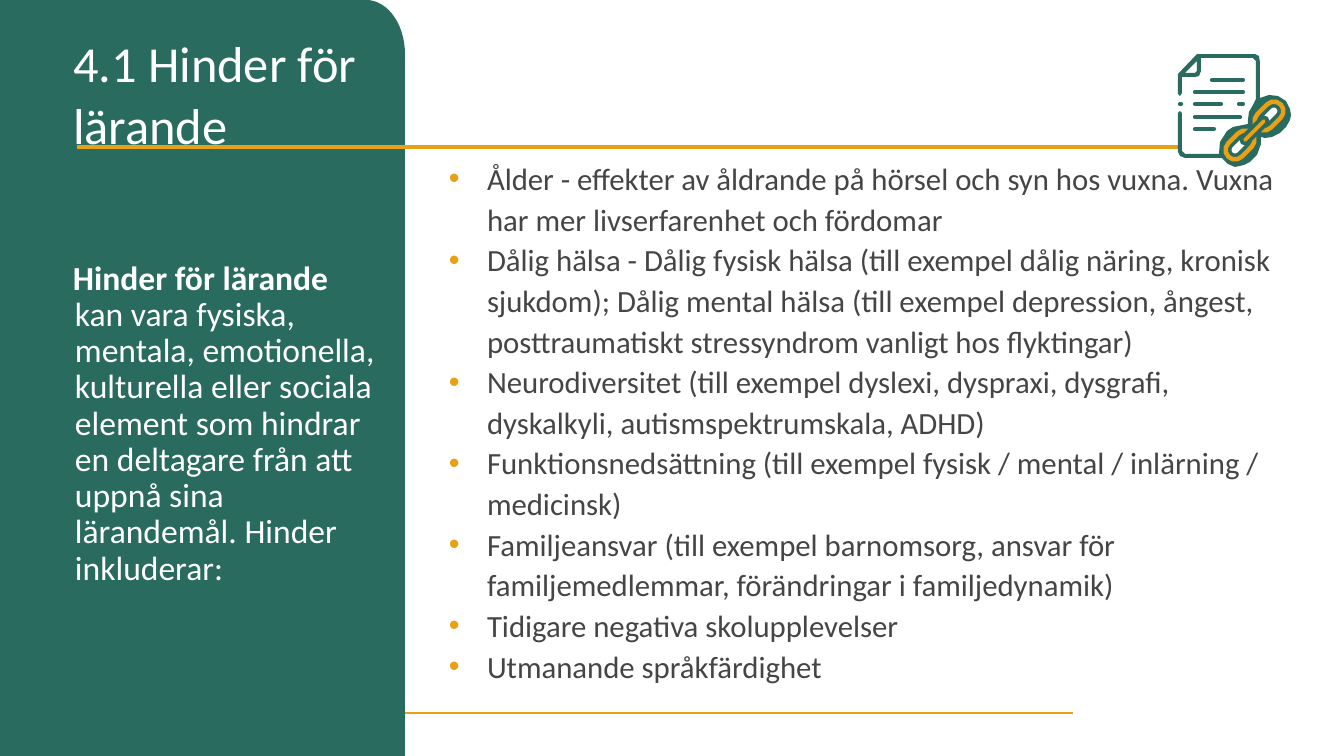
import math

import pptx
import pptx.util
from lxml import etree
from pptx.dml.color import RGBColor
from pptx.enum.shapes import MSO_CONNECTOR, MSO_SHAPE
from pptx.enum.text import MSO_ANCHOR, PP_ALIGN
from pptx.oxml.ns import qn

PX = 914400 / 100.8
GREEN, GOLD, WHITE, GREY = "296B5F", "E8A116", "FFFFFF", "454545"
BARRIERS = [
    "Ålder - effekter av åldrande på hörsel och syn hos vuxna. Vuxna har mer livserfarenhet och fördomar",
    "Dålig hälsa - Dålig fysisk hälsa (till exempel dålig näring, kronisk sjukdom); Dålig mental hälsa "
    "(till exempel depression, ångest, posttraumatiskt stressyndrom vanligt hos flyktingar)",
    "Neurodiversitet (till exempel dyslexi, dyspraxi, dysgrafi, dyskalkyli, autismspektrumskala, ADHD)",
    "Funktionsnedsättning (till exempel fysisk / mental / inlärning / medicinsk)",
    "Familjeansvar (till exempel barnomsorg, ansvar för familjemedlemmar, förändringar i familjedynamik)",
    "Tidigare negativa skolupplevelser",
    "Utmanande språkfärdighet",
]
# Page edge running into the outer edge of the chain, relative to the icon
PAGE_AND_CHAIN = [
    (0, 59), (2, 57), (4, 59), (4, 97), (7, 100), (41, 100), (42, 88), (49, 77), (55, 73),
    (70, 70), (70, 66), (71, 58), (75, 51), (78, 45), (78, 7), (75, 4), (23, 4), (23, 17),
    (21, 22), (17, 23), (4, 23), (4, 39), (2, 42), (0, 40), (0, 20), (19, 0), (77, 0),
    (81, 2), (82, 8), (82, 44), (91, 41), (100, 42), (108, 47), (112, 55), (113, 61),
    (112, 66), (108, 73), (102, 79), (94, 83), (87, 84), (83, 83), (83, 90), (79, 101),
    (72, 108), (66, 111), (57, 113), (50, 110), (44, 104), (7, 104), (2, 102), (0, 98),
]
PAGE_FOLD = [(7, 19), (17, 19), (19, 17), (19, 7)]


def emu(px):
    return round(px * PX)


def color(hex_code):
    return RGBColor.from_string(hex_code)


def stroke(shape, hex_code, points, cap="flat"):
    shape.line.color.rgb = color(hex_code)
    shape.line.width = pptx.util.Pt(points)
    shape._element.spPr.find(qn("a:ln")).set("cap", cap)


def rule(slide, start, end, hex_code, points, cap="flat"):
    line = slide.shapes.add_connector(MSO_CONNECTOR.STRAIGHT, *map(emu, start + end))
    stroke(line, hex_code, points, cap)
    etree.SubElement(line._element.spPr, qn("a:effectLst"))


def fill(shape, hex_code):
    shape.shadow.inherit = False
    shape.fill.solid()
    shape.fill.fore_color.rgb = color(hex_code)
    shape.line.fill.background()


def area(slide, contours, hex_code):
    """Draw one filled outline; contours after the first cut holes."""
    builder = None
    for contour in contours:
        points = [(emu(x), emu(y)) for x, y in contour]
        if builder:
            builder.move_to(*points[0])
        else:
            builder = slide.shapes.build_freeform(*points[0])
        builder.add_line_segments(points[1:], close=True)
    fill(builder.convert_to_shape(), hex_code)


def place(shape, box):
    shape.left, shape.top, shape.width, shape.height = map(emu, box)


def write(shape, paragraphs, size, hex_code, spacing, bullet=None, indent=0):
    """Fill a shape with paragraphs, each a list of (text, bold) runs."""
    frame = shape.text_frame
    frame.word_wrap = True
    frame.vertical_anchor = MSO_ANCHOR.TOP
    frame.margin_left = frame.margin_right = emu(10)
    frame.margin_top = frame.margin_bottom = emu(5)
    for index, runs in enumerate(paragraphs):
        paragraph = frame.add_paragraph() if index else frame.paragraphs[0]
        paragraph.alignment = PP_ALIGN.LEFT
        paragraph.line_spacing = spacing
        properties = paragraph._p.get_or_add_pPr()
        properties.set("marL", str(emu(indent)))
        properties.set("indent", str(-emu(indent)))
        if bullet:
            bullet_color = etree.SubElement(properties, qn("a:buClr"))
            etree.SubElement(bullet_color, qn("a:srgbClr"), val=bullet)
            etree.SubElement(properties, qn("a:buFont"), typeface="Arial")
            etree.SubElement(properties, qn("a:buChar"), char="•")
        for text, bold in runs:
            run = paragraph.add_run()
            run.text = text
            run.font.name = "Calibri"
            run.font.size = pptx.util.Pt(size)
            run.font.bold = bold
            run.font.color.rgb = color(hex_code)


def text_box(slide, box, paragraphs, **style):
    write(slide.shapes.add_textbox(*map(emu, box)), paragraphs, **style)


def side_panel(slide, box):
    """Draw the green panel, its top right corner rounded, with title and introduction."""
    left, top, width, height = box
    right, bottom = left + width, top + height
    radius_x, radius_y = 39, 54
    corner = []
    for degrees in range(90, -1, -6):
        angle = math.radians(degrees)
        corner.append((right - radius_x * (1 - math.cos(angle)),
                       top + radius_y * (1 - math.sin(angle))))
    area(slide, [[(left, top)] + corner + [(right, bottom), (left, bottom)]], GREEN)

    title = slide.shapes.title
    slide.shapes._spTree.append(title._element)
    place(title, (left + 63, top + 25, 376, 89))
    write(title, [[("4.1 Hinder för lärande", False)]], size=36, hex_code=WHITE, spacing=1.03)
    introduction = [
        ("Hinder för lärande ", True),
        ("kan vara fysiska, mentala, emotionella, kulturella eller sociala element som hindrar "
         "en deltagare från att uppnå sina lärandemål. Hinder inkluderar:", False),
    ]
    text_box(slide, (left + 63, top + 256, 324, 378), [introduction],
             size=24, hex_code=WHITE, spacing=0.9, indent=2)


def capsule(slide, center, length, thickness):
    x, y = center
    shape = slide.shapes.add_shape(MSO_SHAPE.ROUNDED_RECTANGLE, emu(x - length / 2),
                                   emu(y - thickness / 2), emu(length), emu(thickness))
    shape.adjustments[0] = 0.5
    shape.rotation = -45
    shape.shadow.inherit = False
    return shape


def linked_document_icon(slide, box):
    """Draw a page with a folded corner and a chain at its lower right."""
    left, top, width, height = box

    def at(x, y):
        return left + x, top + y

    area(slide, [[at(*point) for point in contour] for contour in (PAGE_AND_CHAIN, PAGE_FOLD)], GREEN)
    writing = [(34, 65, 26), (17, 65, 38), (17, 43, 50), (61, 65, 50),
               (17, 62, 63), (17, 36, 75), (2, 3, 50)]
    for start, end, y in writing:
        rule(slide, at(start, y), at(end, y), GREEN, 3, "rnd")

    for center in (at(width - 22, 62), at(62, height - 22)):
        ring = capsule(slide, center, 33, 19)
        ring.fill.background()
        stroke(ring, GOLD, 3.2)
        fill(capsule(slide, center, 21, 7), WHITE)
    for hex_code, points in ((GREEN, 8), (GOLD, 2.6)):
        rule(slide, at(67, 86), at(86, 67), hex_code, points, "rnd")


def barrier_list(slide, box):
    text_box(slide, box, [[(barrier, False)] for barrier in BARRIERS],
             size=22, hex_code=GREY, spacing=1.1, bullet=GOLD, indent=38)


def main():
    presentation = pptx.Presentation()
    presentation.slide_width, presentation.slide_height = emu(1344), emu(756)
    slide = presentation.slides.add_slide(presentation.slide_layouts[5])
    rule(slide, (0, 713), (1073, 713), GOLD, 1.5)
    side_panel(slide, (0, 0, 405, 756))
    barrier_list(slide, (439, 151, 852, 378))
    rule(slide, (1180, 147), (77, 147), GOLD, 2.75)
    linked_document_icon(slide, (1178, 54, 113, 113))
    presentation.save("out.pptx")


if __name__ == "__main__":
    main()
